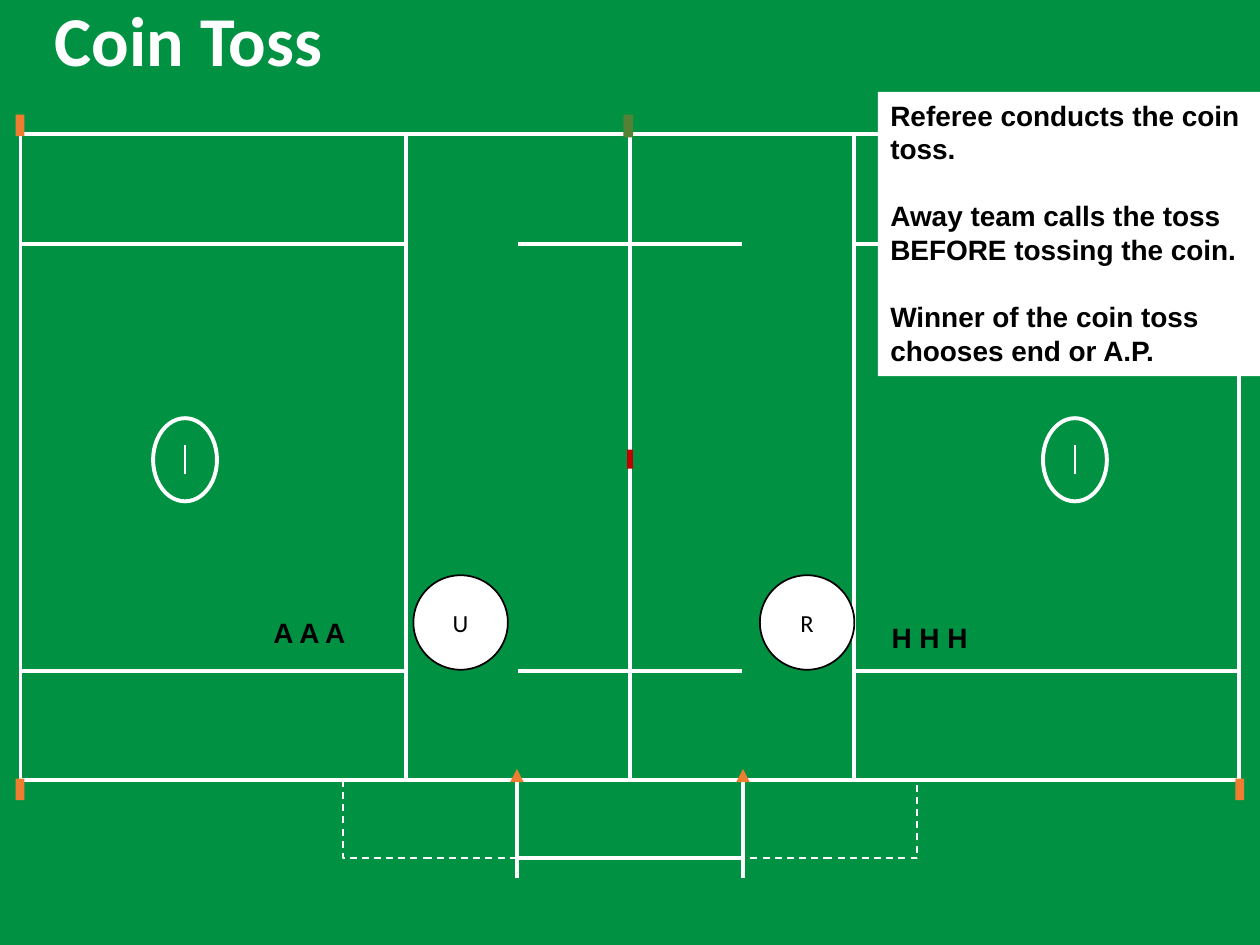
from pptx import Presentation
from pptx.dml.color import RGBColor
from pptx.enum.dml import MSO_LINE
from pptx.enum.shapes import MSO_CONNECTOR, MSO_SHAPE
from pptx.enum.text import MSO_ANCHOR, PP_ALIGN
from pptx.util import Pt
from lxml.etree import SubElement

COLORS = {
    "grass": "009242", "white": "FFFFFF", "black": "000000",
    "orange": "ED7D31", "green": "548135", "red": "C00000",
}
COLORS = {name: RGBColor.from_string(value) for name, value in COLORS.items()}
DRAWING = "{http://schemas.openxmlformats.org/drawingml/2006/main}"

deck = Presentation()
deck.slide_width, deck.slide_height = Pt(720), Pt(540)
page = deck.slides.add_slide(deck.slide_layouts[6])
page.background.fill.solid()
page.background.fill.fore_color.rgb = COLORS["grass"]


def add_box(text="", *, at, kind=MSO_SHAPE.RECTANGLE, fill=None, line=None,
            weight=2.25, dash=None, font="Arial", size=16, color="black",
            bold=True, align=PP_ALIGN.LEFT, anchor=MSO_ANCHOR.TOP,
            wrap=True, gap=0, spacing=None):
    """Add a shape, or a text box when kind is None; each line is a paragraph."""
    place = [Pt(length) for length in at]
    if kind is None:
        box = page.shapes.add_textbox(*place)
    else:
        box = page.shapes.add_shape(kind, *place)
        box.shadow.inherit = False
        if fill:
            box.fill.solid()
            box.fill.fore_color.rgb = COLORS[fill]
        else:
            box.fill.background()
        if line:
            box.line.color.rgb = COLORS[line]
            box.line.width = Pt(weight)
            box.line.dash_style = dash
        else:
            box.line.fill.background()
    if text:
        frame = box.text_frame
        frame.word_wrap = wrap
        frame.vertical_anchor = anchor
        for index, words in enumerate(text.split("\n")):
            para = frame.add_paragraph() if index else frame.paragraphs[0]
            para.alignment = align
            para.line_spacing = spacing
            if index:
                para.space_before = Pt(gap)
            span = para.add_run()
            span.text = words
            span.font.name, span.font.size = font, Pt(size)
            span.font.bold = bold
            span.font.color.rgb = COLORS[color]


def add_line(x1, y1, x2, y2, weight=2.25):
    line = page.shapes.add_connector(
        MSO_CONNECTOR.STRAIGHT, Pt(x1), Pt(y1), Pt(x2), Pt(y2))
    line.line.color.rgb = COLORS["white"]
    line.line.width = Pt(weight)
    SubElement(line._element.spPr, DRAWING + "effectLst")


# Field geometry: the right half mirrors the left about the centre line
LEFT, RESTRAINING, CENTER = 11.75, 232, 360
TOP, UPPER_ALLEY, LOWER_ALLEY, BOTTOM = 76.4, 139.5, 383.2, 446
BENCH, BOX_EDGE = 490.5, 295.4

for side in (-1, 1):
    def mirror(x, width=0):
        return x if side < 0 else 2 * CENTER - x - width

    # Midfield and the three end zones
    half = CENTER - RESTRAINING
    add_box(at=(mirror(RESTRAINING, half), TOP, half, BOTTOM - TOP), line="white")
    end = RESTRAINING - LEFT
    rows = (TOP, UPPER_ALLEY, LOWER_ALLEY, BOTTOM)
    for upper, lower in zip(rows, rows[1:]):
        add_box(at=(mirror(LEFT, end), upper, end, lower - upper), line="white")

    # Corner markers
    for y in (65.5, 445) if side < 0 else (445,):
        add_box(at=(mirror(9, 5), y, 5, 12.3), fill="orange")

    # Dashed bench area
    add_box(at=(mirror(196, 99), 446.5, 99, 44), line="white", weight=1,
            dash=MSO_LINE.DASH)

    # Crease and goal line
    add_box(at=(mirror(87.5, 36.5), 239, 36.5, 47.5), kind=MSO_SHAPE.OVAL,
            line="white")
    add_line(mirror(105.8), 271, mirror(105.8), 254.3, 1.5)

    # Substitution box and wing lines
    add_line(mirror(BOX_EDGE), 502, mirror(BOX_EDGE), 447)
    for y in (LOWER_ALLEY, UPPER_ALLEY, BENCH):
        add_line(CENTER, y, mirror(296), y)

    # Cone
    tip = mirror(BOX_EDGE)
    builder = page.shapes.build_freeform(Pt(tip), Pt(439.4))
    builder.add_line_segments(
        [(Pt(tip + 3.9), Pt(447)), (Pt(tip - 3.9), Pt(447))], close=True)
    cone = builder.convert_to_shape()
    cone.shadow.inherit = False
    cone.fill.solid()
    cone.fill.fore_color.rgb = COLORS["orange"]
    cone.line.fill.background()

# Midline marker and centre spot
add_box(at=(356.2, 65.5, 5.6, 13), fill="green")
add_box(at=(358.4, 257, 3.2, 10.8), fill="red")

# Title
add_box("Coin Toss", at=(24.3, 16.5, 193, 17.5), kind=None, font="Calibri",
        size=40, color="white", anchor=MSO_ANCHOR.MIDDLE, spacing=0.9)

# Officials
for letter, x in (("U", 236.2), ("R", 434.2)):
    add_box(letter, at=(x, 328.7, 54, 54), kind=MSO_SHAPE.OVAL, fill="white",
            line="black", weight=1, font="Calibri", size=14, bold=False,
            align=PP_ALIGN.CENTER, anchor=MSO_ANCHOR.MIDDLE)

# Away and home players
for players, x, y in (("A A A", 149.2, 348), ("H H H", 502.4, 351)):
    add_box(players, at=(x, y, 59, 26.6), kind=None, wrap=False)

# Coin toss rules
add_box("Referee conducts the coin toss.\n"
        "Away team calls the toss BEFORE tossing the coin.\n"
        "Winner of the coin toss chooses end or A.P.",
        at=(501.7, 52.5, 218.3, 162.4), fill="white", gap=19.2)

deck.save("out.pptx")
